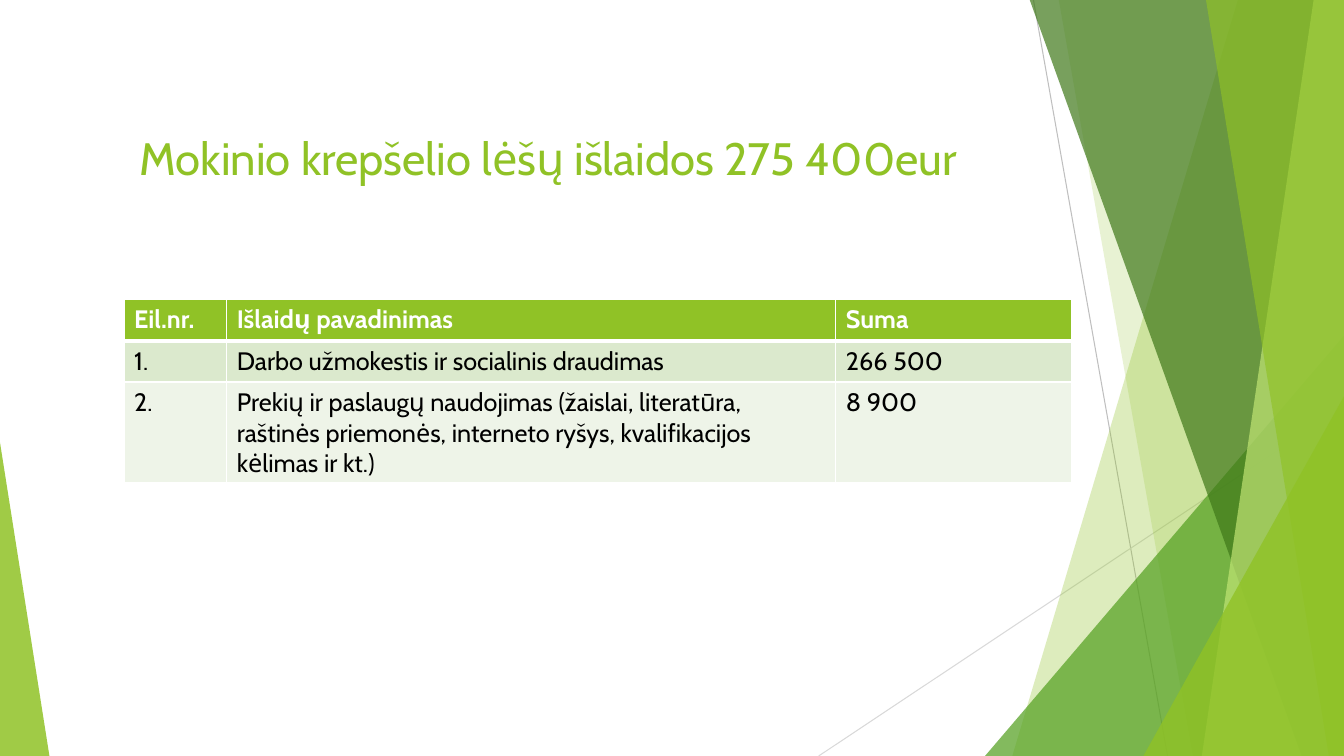
from lxml import etree
from pptx import Presentation
from pptx import util as u
from pptx.dml.color import RGBColor
from pptx.enum import shapes, text
from pptx.oxml import ns

PX = 9144
WIDTH, HEIGHT = 1333, 750
FONT = "Cabin"
GREEN = RGBColor(0x90, 0xC2, 0x26)
MID_GREEN = RGBColor(0x54, 0xA0, 0x21)
DARK_GREEN = RGBColor(0x3F, 0x78, 0x19)
LIME = RGBColor(0xC0, 0xE4, 0x74)
BAND_DARK = RGBColor(0xDB, 0xE9, 0xCD)
BAND_LIGHT = RGBColor(0xEE, 0xF4, 0xE8)
GREY = RGBColor(0xBF, 0xBF, 0xBF)
LIGHT_GREY = RGBColor(0xD9, 0xD9, 0xD9)
WHITE = RGBColor(0xFF, 0xFF, 0xFF)
BLACK = RGBColor(0x00, 0x00, 0x00)

COLUMNS = [102, 604, 234]
ROWS = [
    (41, GREEN, WHITE, True, ["Eil.nr.", "Išlaidų pavadinimas", "Suma"]),
    (41, BAND_DARK, BLACK, False,
     ["1.", "Darbo užmokestis ir socialinis draudimas", "266 500"]),
    (99, BAND_LIGHT, BLACK, False,
     ["2.", "Prekių ir paslaugų naudojimas (žaislai, literatūra, raštinės "
            "priemonės, interneto ryšys, kvalifikacijos kėlimas ir kt.)", "8 900"]),
]


def px(*lengths):
    return [u.Emu(length * PX) for length in lengths]


def set_values(target, values):
    for name, value in values.items():
        setattr(target, name, value)


def write(para, words, size, color, bold=False):
    span = para.add_run()
    span.text = words
    set_values(span.font, {"name": FONT, "size": u.Pt(size), "bold": bold})
    span.font.color.rgb = color


def paint(shape, color, opacity):
    shape.shadow.inherit = False
    shape.fill.solid()
    shape.fill.fore_color.rgb = color
    shape.line.fill.background()
    tint = shape.fill._xPr.find(ns.qn("a:solidFill"))[0]
    etree.SubElement(tint, ns.qn("a:alpha"), val=str(opacity * 1000))


def add_line(page, ends, color):
    line = page.shapes.add_connector(shapes.MSO_CONNECTOR.STRAIGHT, *px(*ends))
    line.line.color.rgb = color
    line.line.width = u.Pt(0.75)
    etree.SubElement(line._element.spPr, ns.qn("a:effectLst"))


def add_facet(page, box, top_x, bottom_x, color, opacity):
    left, top, width, height = box
    right, bottom = left + width, top + height
    builder = page.shapes.build_freeform(top_x, top, scale=PX)
    builder.add_line_segments([(right, top), (right, bottom), (bottom_x, bottom)])
    paint(builder.convert_to_shape(), color, opacity)


def add_corner(page, box, apex, color, opacity):
    corner = page.shapes.add_shape(shapes.MSO_SHAPE.ISOSCELES_TRIANGLE, *px(*box))
    corner.adjustments[0] = apex
    paint(corner, color, opacity)


def add_backdrop(page, box):
    left, top, width, height = box
    right, bottom = left + width, top + height
    facets = (left, top - 1, width, height + 1)
    add_line(page, (left + 1025, top, left + 1158, bottom), GREY)
    add_line(page, (right, top + 403, left + 812, bottom), LIGHT_GREY)
    add_facet(page, facets, left + 1228, left + 1004, GREEN, 30)
    add_facet(page, facets, left + 1050, left + 1183, GREEN, 20)
    add_corner(page, (right - 356, bottom - 417, 356, 417), 1, MID_GREEN, 72)
    for top_x, bottom_x, color, opacity in [
        (1021, 1291, DARK_GREEN, 70),
        (1303, 1192, LIME, 70),
        (1196, 1318, GREEN, 65),
    ]:
        add_facet(page, facets, left + top_x, left + bottom_x, color, opacity)
    add_corner(page, (right - 199, bottom - 357, 199, 357), 1, GREEN, 80)
    add_corner(page, (left, bottom - 311, 49, 311), 0, GREEN, 85)


def add_title(page, box):
    frame = page.shapes.add_textbox(*px(*box)).text_frame
    set_values(frame, {
        "word_wrap": True,
        "vertical_anchor": text.MSO_ANCHOR.MIDDLE,
        "margin_top": px(39)[0],
        "margin_bottom": px(5)[0],
    })
    para = frame.paragraphs[0]
    para.alignment = text.PP_ALIGN.CENTER
    write(para, "Mokinio krepšelio lėšų išlaidos 275 400eur", 32.4, GREEN)


def add_borders(cell, widths):
    properties = cell._tc.get_or_add_tcPr()
    for side, width in widths.items():
        edge = etree.SubElement(properties, ns.qn("a:ln" + side), w=str(u.Pt(width)))
        fill = etree.SubElement(edge, ns.qn("a:solidFill"))
        etree.SubElement(fill, ns.qn("a:srgbClr"), val=str(WHITE))


def add_expenses(page, box):
    table = page.shapes.add_table(len(ROWS), len(COLUMNS), *px(*box)).table
    table.horz_banding = False
    for column, width in zip(table.columns, px(*COLUMNS)):
        column.width = width
    for index, (height, fill, color, bold, words) in enumerate(ROWS):
        table.rows[index].height = px(height)[0]
        widths = {"L": 1, "R": 1, "T": 3 if index == 1 else 1, "B": 3 if index == 0 else 1}
        for cell, label in zip(table.rows[index].cells, words):
            add_borders(cell, widths)
            cell.fill.solid()
            cell.fill.fore_color.rgb = fill
            write(cell.text_frame.paragraphs[0], label, 18, color, bold)


def main():
    deck = Presentation()
    deck.slide_width, deck.slide_height = px(WIDTH, HEIGHT)
    page = deck.slides.add_slide(deck.slide_layouts[6])
    add_backdrop(page, (0, 0, WIDTH, HEIGHT))
    add_title(page, (74, 67, 940, 144))
    add_expenses(page, (123, 297, sum(COLUMNS), sum(row[0] for row in ROWS)))
    deck.save("out.pptx")


if __name__ == "__main__":
    main()
